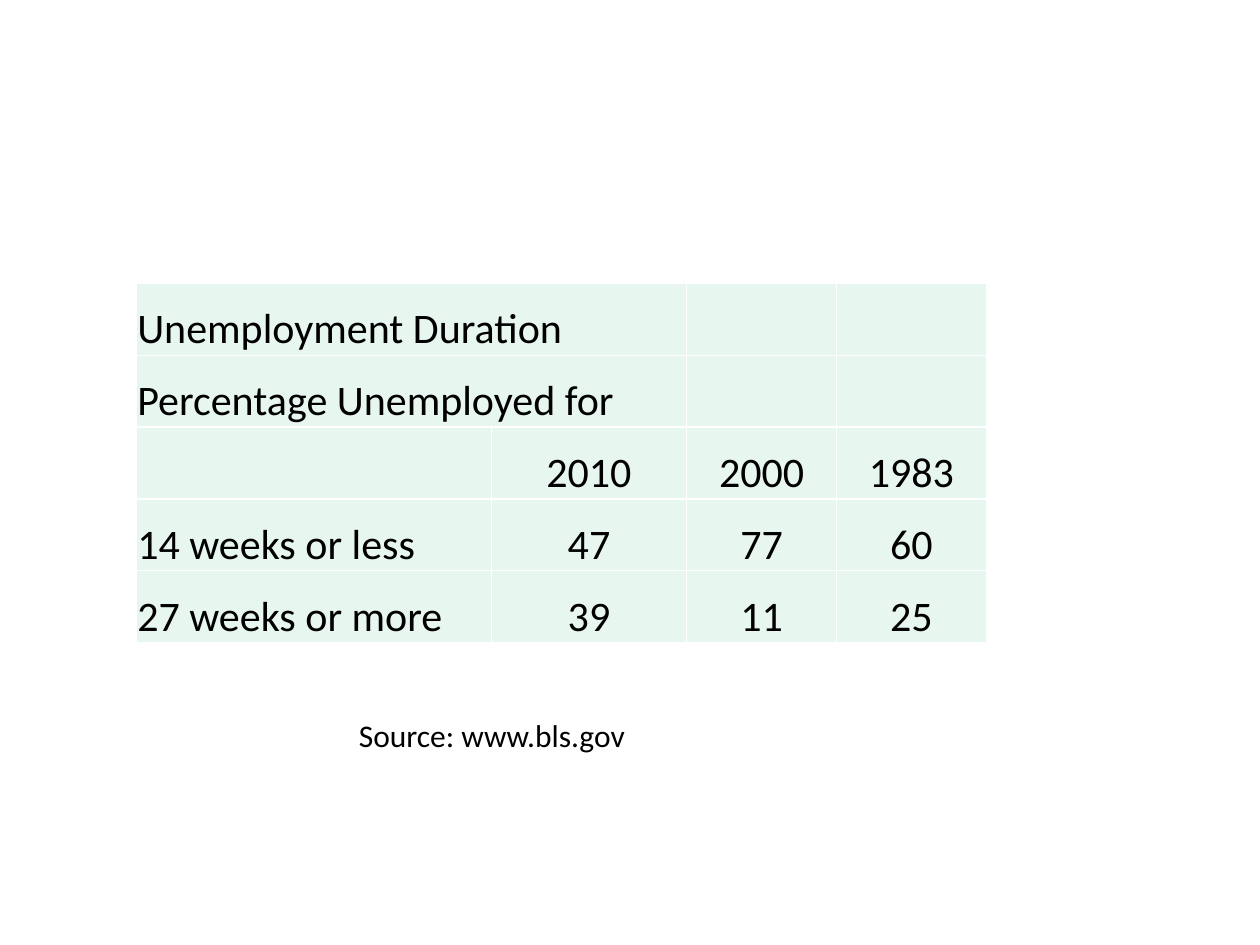
from lxml.etree import SubElement
from pptx import Presentation
from pptx.dml.color import RGBColor
from pptx.enum.text import MSO_ANCHOR, MSO_AUTO_SIZE, PP_ALIGN
from pptx.oxml import parse_xml
from pptx.oxml.ns import nsdecls, qn
from pptx.util import Inches, Pt

COLUMN_WIDTHS = [2.82, 1.55, 1.19, 1.19]
ROW_HEIGHT = 0.57
ROWS = [
    ["Unemployment Duration", "", "", ""],
    ["Percentage Unemployed for", "", "", ""],
    ["", "2010", "2000", "1983"],
    ["14 weeks or less", "47", "77", "60"],
    ["27 weeks or more", "39", "11", "25"],
]
HEADING_ROWS = 2


def color(hex_string):
    return RGBColor.from_string(hex_string)


class SlideBuilder:
    font_name = "Calibri"
    text_color = "000000"
    cell_color = "E7F6EF"
    border_color = "FFFFFF"

    def __init__(self, page):
        self.page = page

    def set_text(self, para, text, size, align=PP_ALIGN.LEFT):
        para.text = text
        para.alignment = align
        para.font.name = self.font_name
        para.font.size = Pt(size)
        para.font.color.rgb = color(self.text_color)

    def add_borders(self, cell):
        properties = cell._tc.get_or_add_tcPr()
        for position, side in enumerate(("lnL", "lnR", "lnT", "lnB")):
            line = parse_xml(f'<a:{side} {nsdecls("a")} w="{Pt(1)}"/>')
            fill = SubElement(line, qn("a:solidFill"))
            SubElement(fill, qn("a:srgbClr"), val=self.border_color)
            properties.insert(position, line)

    def format_cell(self, cell, text, align):
        cell.margin_left = cell.margin_right = cell.margin_top = Inches(0.01)
        cell.margin_bottom = 0
        cell.vertical_anchor = MSO_ANCHOR.BOTTOM
        cell.fill.solid()
        cell.fill.fore_color.rgb = color(self.cell_color)
        self.add_borders(cell)
        self.set_text(cell.text_frame.paragraphs[0], text, 24, align)

    def add_table(self, left, top, rows, column_widths, row_height, heading_rows):
        frame = self.page.shapes.add_table(
            len(rows), len(column_widths), Inches(left), Inches(top),
            Inches(sum(column_widths)), Inches(row_height * len(rows)))
        table = frame.table
        table.first_row = table.horz_banding = False
        for column, width in zip(table.columns, column_widths):
            column.width = Inches(width)
        for row_index, values in enumerate(rows):
            table.rows[row_index].height = Inches(row_height)
            for column_index, value in enumerate(values):
                align = PP_ALIGN.CENTER if column_index else PP_ALIGN.LEFT
                self.format_cell(table.cell(row_index, column_index), value, align)
        for row_index in range(heading_rows):
            table.cell(row_index, 0).merge(table.cell(row_index, 1))

    def add_text(self, left, top, width, height, text, size):
        box = self.page.shapes.add_textbox(
            Inches(left), Inches(top), Inches(width), Inches(height))
        box.text_frame.word_wrap = True
        box.text_frame.auto_size = MSO_AUTO_SIZE.SHAPE_TO_FIT_TEXT
        self.set_text(box.text_frame.paragraphs[0], text, size)


def main():
    deck = Presentation()
    deck.slide_width = Inches(10)
    deck.slide_height = Inches(7.5)
    builder = SlideBuilder(deck.slides.add_slide(deck.slide_layouts[6]))
    builder.add_table(1.08, 2.25, ROWS, COLUMN_WIDTHS, ROW_HEIGHT, HEADING_ROWS)
    builder.add_text(2.75, 5.63, 4.33, 0.4, "Source: www.bls.gov", 18)
    deck.save("out.pptx")


if __name__ == "__main__":
    main()
